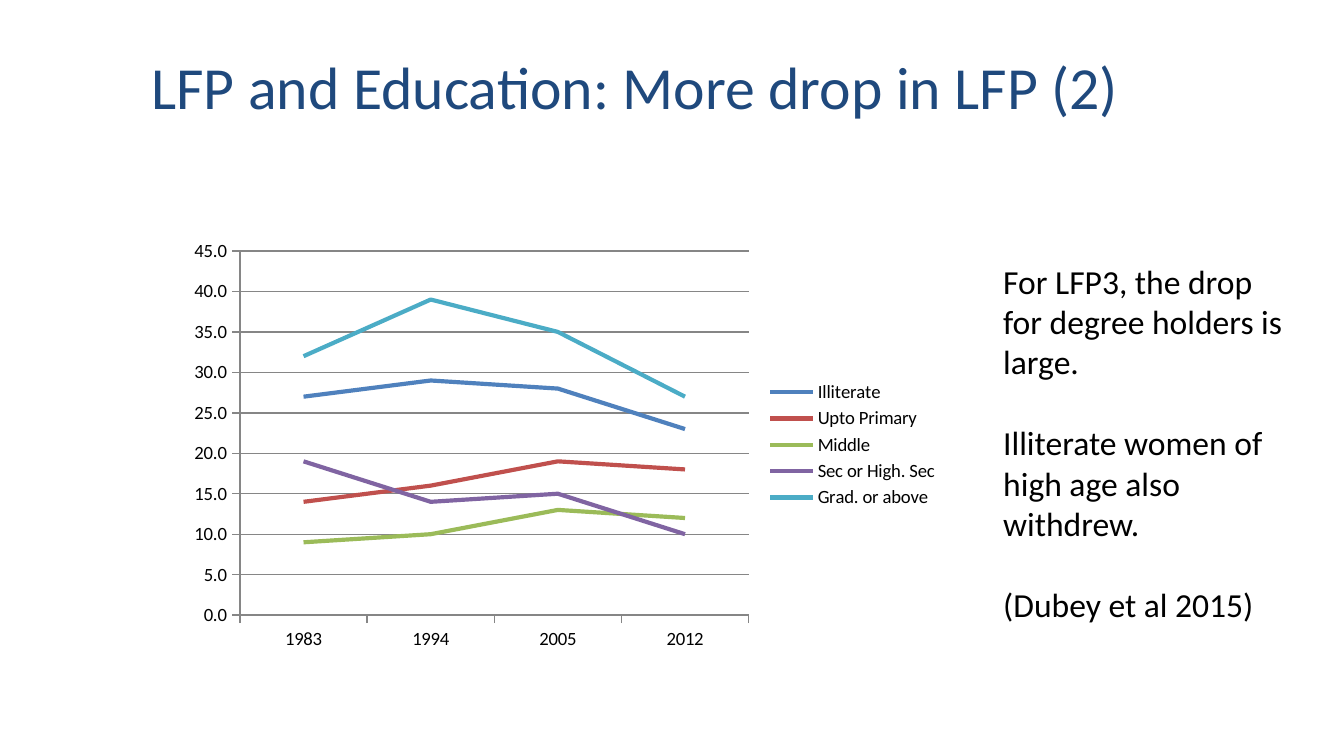
from pptx import Presentation
from pptx.chart.data import CategoryChartData as Data
from pptx.dml.color import RGBColor as RGB
from pptx.enum.chart import XL_CHART_TYPE as Kind, XL_LEGEND_POSITION as Side
from pptx.enum.chart import XL_TICK_MARK as Tick
from pptx.enum.text import MSO_ANCHOR as Anchor, PP_ALIGN as Align
from pptx.util import Pt

PX = 6804
FONT = "Calibri"
NAVY = RGB(0x1F, 0x49, 0x7D)
BLACK = RGB(0, 0, 0)
GREY = RGB(0x86, 0x86, 0x86)
BLUE = RGB(0x4F, 0x81, 0xBD)
RED = RGB(0xC0, 0x50, 0x4D)
GREEN = RGB(0x9B, 0xBB, 0x59)
PURPLE = RGB(0x80, 0x64, 0xA2)
TEAL = RGB(0x4B, 0xAC, 0xC6)

YEARS = ["1983", "1994", "2005", "2012"]
LEVELS = [
    ("Illiterate", BLUE, (27, 29, 28, 23)),
    ("Upto Primary", RED, (14, 16, 19, 18)),
    ("Middle", GREEN, (9, 10, 13, 12)),
    ("Sec or High. Sec", PURPLE, (19, 14, 15, 10)),
    ("Grad. or above", TEAL, (32, 39, 35, 27)),
]
NOTES = [
    "For LFP3, the drop for degree holders is large.",
    "Illiterate women of high age also withdrew.",
    "(Dubey et al 2015)",
]


def scale(box):
    return [side * PX for side in box]


def style(font, size, color):
    font.name = FONT
    font.size = Pt(size)
    font.color.rgb = color


def add_text(slide, box, lines, size, color):
    frame = slide.shapes.add_textbox(*scale(box)).text_frame
    frame.word_wrap = True
    frame.text = "\n".join(lines)
    for para in frame.paragraphs:
        for run in para.runs:
            style(run.font, size, color)
    return frame


def add_title(slide, box):
    frame = add_text(slide, box, ["LFP and Education: More drop in LFP (2)"], 32, NAVY)
    frame.vertical_anchor = Anchor.MIDDLE
    frame.paragraphs[0].alignment = Align.CENTER


def add_notes(slide, box):
    frame = add_text(slide, box, NOTES, 18, BLACK)
    for para in frame.paragraphs[1:]:
        para.space_before = Pt(21.7)


def add_trend(slide, box):
    data = Data(number_format="0.0")
    data.categories = YEARS
    for name, _, vals in LEVELS:
        data.add_series(name, vals)
    chart = slide.shapes.add_chart(Kind.LINE, *scale(box), data).chart
    style(chart.font, 10, BLACK)
    chart.has_title = False
    chart.has_legend = True
    chart.legend.position = Side.RIGHT
    chart.legend.include_in_layout = False
    chart.plots[0].vary_by_categories = False

    for line, (_, color, _) in zip(chart.plots[0].series, LEVELS):
        line.smooth = False
        line.format.line.color.rgb = color
        line.format.line.width = Pt(2.25)

    years, rates = chart.category_axis, chart.value_axis
    for axis in (years, rates):
        axis.major_tick_mark = Tick.OUTSIDE
        axis.minor_tick_mark = Tick.NONE
        axis.format.line.color.rgb = GREY
    rates.minimum_scale = 0
    rates.maximum_scale = 45
    rates.major_unit = 5
    rates.has_major_gridlines = True
    rates.major_gridlines.format.line.color.rgb = GREY
    rates.tick_labels.number_format = "0.0"
    rates.tick_labels.number_format_is_linked = False


def main():
    deck = Presentation()
    deck.slide_width, deck.slide_height = scale((1344, 756))
    slide = deck.slides.add_slide(deck.slide_layouts[6])
    add_title(slide, (0, 46, 1271, 79))
    add_trend(slide, (179, 232, 773, 426))
    add_notes(slide, (990, 254, 317, 421))
    deck.save("out.pptx")


if __name__ == "__main__":
    main()
